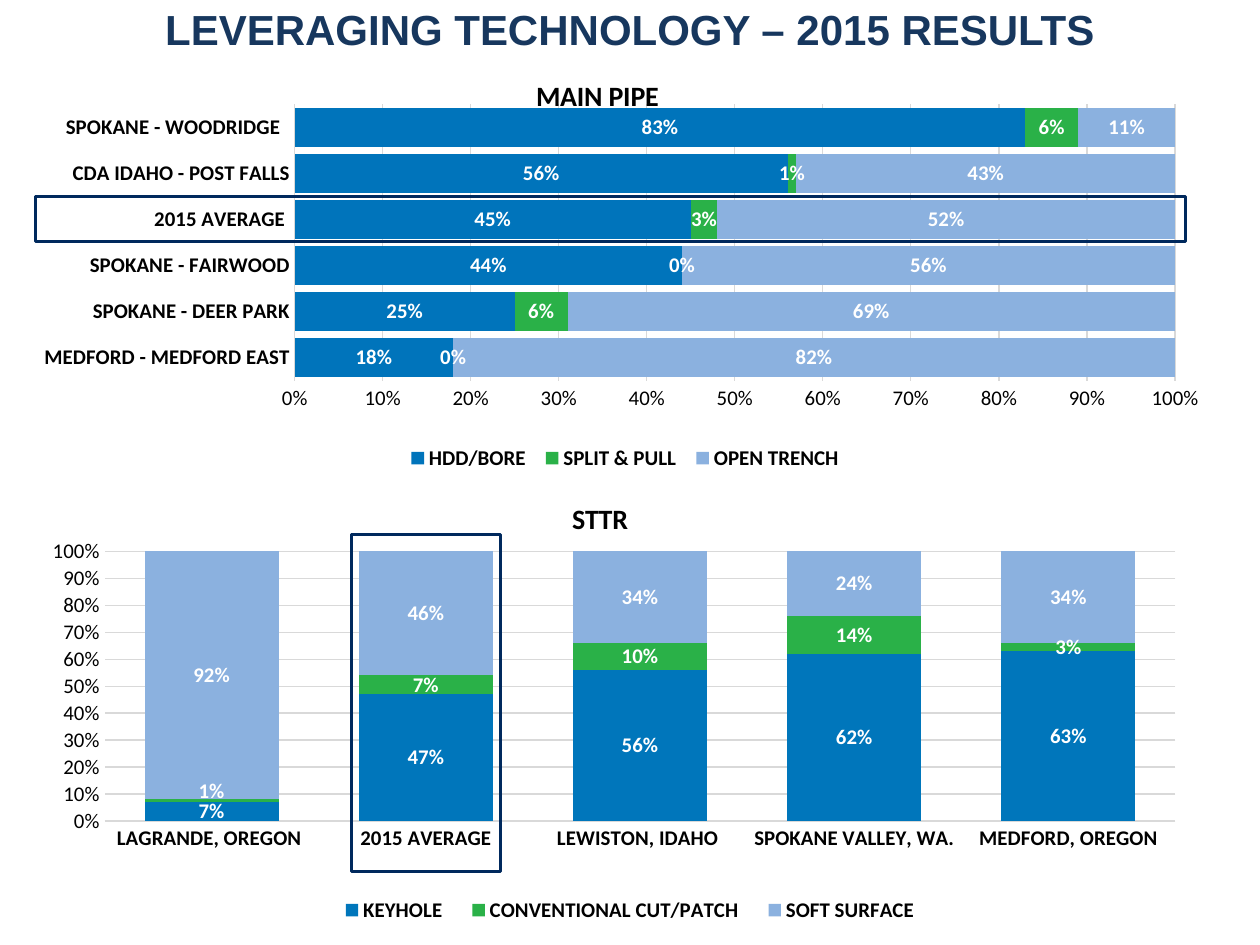
from dataclasses import dataclass
from typing import Optional

from pptx import Presentation
from pptx import util as u
from pptx.chart.data import CategoryChartData
from pptx.dml.color import RGBColor
from pptx.enum import chart as charts, shapes, text
from pptx.oxml import parse_xml
from pptx.oxml.ns import nsdecls


@dataclass(frozen=True)
class Theme:
    title: str = "17375E"
    ink: str = "000000"
    label: str = "FFFFFF"
    grid: str = "D9D9D9"
    outline: str = "00295D"
    title_size: float = 24
    chart_title_size: float = 16
    chart_size: float = 11.9
    grid_width: float = 0.75
    outline_width: float = 1.75
    title_font: str = "Arial"
    chart_font: str = "Calibri"


@dataclass(frozen=True)
class Area:
    column: float
    row: float
    columns: float
    rows: float


@dataclass(frozen=True)
class Series:
    name: str
    color: str
    values: tuple[float, ...]
    raised_point: Optional[int] = None


@dataclass(frozen=True)
class Panel:
    title: str
    kind: charts.XL_CHART_TYPE
    area: Area
    categories: tuple[str, ...]
    series: tuple[Series, ...]
    gap: int
    legend_size: float
    plot_share: tuple[float, ...]
    title_share: tuple[float, ...]
    legend_share: tuple[float, ...]


@dataclass(frozen=True)
class Highlight:
    area: Area
    rotation: float = 0


THEME = Theme()
COLUMNS, ROWS = 100, 75
WIDTH, HEIGHT = u.Inches(10), u.Inches(7.5)

PANELS = (
    Panel(
        "MAIN PIPE", charts.XL_CHART_TYPE.BAR_STACKED_100, Area(1, 4.7, 95.7, 33.5),
        ("MEDFORD - MEDFORD EAST", "SPOKANE - DEER PARK", "SPOKANE - FAIRWOOD",
         "2015 AVERAGE ", "CDA IDAHO - POST FALLS", "SPOKANE - WOODRIDGE  "),
        (Series("HDD/BORE", "0074BB", (0.18, 0.25, 0.44, 0.45, 0.56, 0.83)),
         Series("SPLIT & PULL", "2AB148", (0, 0.06, 0, 0.03, 0.01, 0.06)),
         Series("OPEN TRENCH ", "8BB1DF", (0.82, 0.69, 0.56, 0.52, 0.43, 0.11))),
        20, 12, (0.234, 0.107, 0.73, 0.655), (0.43, 0.03), (0.32, 0.9, 0.38, 0.09),
    ),
    Panel(
        "STTR", charts.XL_CHART_TYPE.COLUMN_STACKED_100, Area(0, 38.2, 100, 36.8),
        ("LAGRANDE, OREGON ", "2015 AVERAGE", "LEWISTON, IDAHO ",
         "SPOKANE VALLEY, WA.", "MEDFORD, OREGON"),
        (Series("KEYHOLE ", "0076BB", (0.07, 0.47, 0.56, 0.62, 0.63)),
         Series("CONVENTIONAL CUT/PATCH ", "2AB148", (0.01, 0.07, 0.1, 0.14, 0.03), 0),
         Series("SOFT SURFACE", "8BB1DF", (0.92, 0.46, 0.34, 0.24, 0.34))),
        60, 11.9, (0.083, 0.151, 0.85, 0.582), (0.45, 0.03), (0.26, 0.88, 0.48, 0.09),
    ),
)
HIGHLIGHTS = (
    Highlight(Area(2.8, 15.6, 91.3, 3.6)),
    Highlight(Area(20.4, 49.9, 26.8, 11.8), 270),
)


def place(area: Area) -> tuple[int, int, int, int]:
    return (int(WIDTH * area.column / COLUMNS), int(HEIGHT * area.row / ROWS),
            int(WIDTH * area.columns / COLUMNS), int(HEIGHT * area.rows / ROWS))


def style_font(font, size: float, color: str, bold: bool, name: str = THEME.chart_font) -> None:
    font.size, font.bold, font.name = u.Pt(size), bold, name
    font.color.rgb = RGBColor.from_string(color)


def style_line(line, color: str, width: float) -> None:
    line.color.rgb = RGBColor.from_string(color)
    line.width = u.Pt(width)


def set_layout(element, share: tuple[float, ...], index: int = 0, edge: bool = True) -> None:
    for layout in element.xpath("c:layout"):
        element.remove(layout)
    for overlay in element.xpath("c:overlay"):
        index = element.index(overlay)
    target = '<c:layoutTarget val="inner"/>' if element.tag.endswith("plotArea") else ""
    modes = '<c:xMode val="edge"/><c:yMode val="edge"/>' if edge else ""
    sizes = "".join(f'<c:{key} val="{value}"/>' for key, value in zip("xywh", share))
    element.insert(index, parse_xml(
        f'<c:layout {nsdecls("c")}><c:manualLayout>{target}{modes}{sizes}'
        "</c:manualLayout></c:layout>"))


def style_axes(chart) -> None:
    for axis, bold in ((chart.category_axis, True), (chart.value_axis, False)):
        axis.major_tick_mark = axis.minor_tick_mark = charts.XL_TICK_MARK.NONE
        style_font(axis.tick_labels.font, THEME.chart_size, THEME.ink, bold)
    style_line(chart.category_axis.format.line, THEME.grid, THEME.grid_width)
    values = chart.value_axis
    values.format.line.fill.background()
    values.has_major_gridlines = True
    style_line(values.major_gridlines.format.line, THEME.grid, THEME.grid_width)
    values.tick_labels.number_format = "0%"
    values.tick_labels.number_format_is_linked = False


def style_series(series, source: Series) -> None:
    series.format.fill.solid()
    series.format.fill.fore_color.rgb = RGBColor.from_string(source.color)
    labels = series.data_labels
    labels.show_value = True
    labels.number_format = "0%"
    labels.number_format_is_linked = False
    style_font(labels.font, THEME.chart_size, THEME.label, True)
    if source.raised_point is not None:
        label = series.points[source.raised_point].data_label
        style_font(label.font, THEME.chart_size, THEME.label, True)
        set_layout(series._element.xpath("c:dLbls/c:dLbl")[0], (0, -0.02), 1, False)


def draw_panel(slide, panel: Panel) -> None:
    data = CategoryChartData(number_format="0%")
    data.categories = panel.categories
    for source in panel.series:
        data.add_series(source.name, source.values)
    chart = slide.shapes.add_chart(panel.kind, *place(panel.area), data).chart
    style_font(chart.font, 10, THEME.ink, False)

    chart.has_title = True
    run = chart.chart_title.text_frame.paragraphs[0].add_run()
    run.text = panel.title
    style_font(run.font, THEME.chart_title_size, THEME.ink, True)
    set_layout(chart.chart_title._element, panel.title_share)

    chart.has_legend = True
    chart.legend.position = charts.XL_LEGEND_POSITION.BOTTOM
    chart.legend.include_in_layout = False
    style_font(chart.legend.font, panel.legend_size, THEME.ink, True)
    set_layout(chart.legend._element, panel.legend_share)

    plot = chart.plots[0]
    plot.gap_width, plot.overlap, plot.vary_by_categories = panel.gap, 100, False
    set_layout(chart._chartSpace.xpath("c:chart/c:plotArea")[0], panel.plot_share)
    style_axes(chart)
    for series, source in zip(plot.series, panel.series):
        style_series(series, source)


def draw_highlight(slide, highlight: Highlight) -> None:
    shape = slide.shapes.add_shape(shapes.MSO_SHAPE.RECTANGLE, *place(highlight.area))
    shape.rotation = highlight.rotation
    shape.shadow.inherit = False
    shape.fill.background()
    style_line(shape.line, THEME.outline, THEME.outline_width)


def draw_title(slide, wording: str) -> None:
    title = slide.shapes.title
    title.left, title.top, title.width, title.height = place(Area(0, 0, COLUMNS, 4.5))
    title.text_frame.vertical_anchor = text.MSO_ANCHOR.MIDDLE
    paragraph = title.text_frame.paragraphs[0]
    paragraph.alignment = text.PP_ALIGN.CENTER
    run = paragraph.add_run()
    run.text = wording
    style_font(run.font, THEME.title_size, THEME.title, True, THEME.title_font)


def main() -> None:
    presentation = Presentation()
    presentation.slide_width, presentation.slide_height = WIDTH, HEIGHT
    slide = presentation.slides.add_slide(presentation.slide_layouts[5])
    draw_title(slide, "LEVERAGING TECHNOLOGY – 2015 RESULTS")
    for panel in PANELS:
        draw_panel(slide, panel)
    for highlight in HIGHLIGHTS:
        draw_highlight(slide, highlight)
    presentation.save("out.pptx")


if __name__ == "__main__":
    main()
